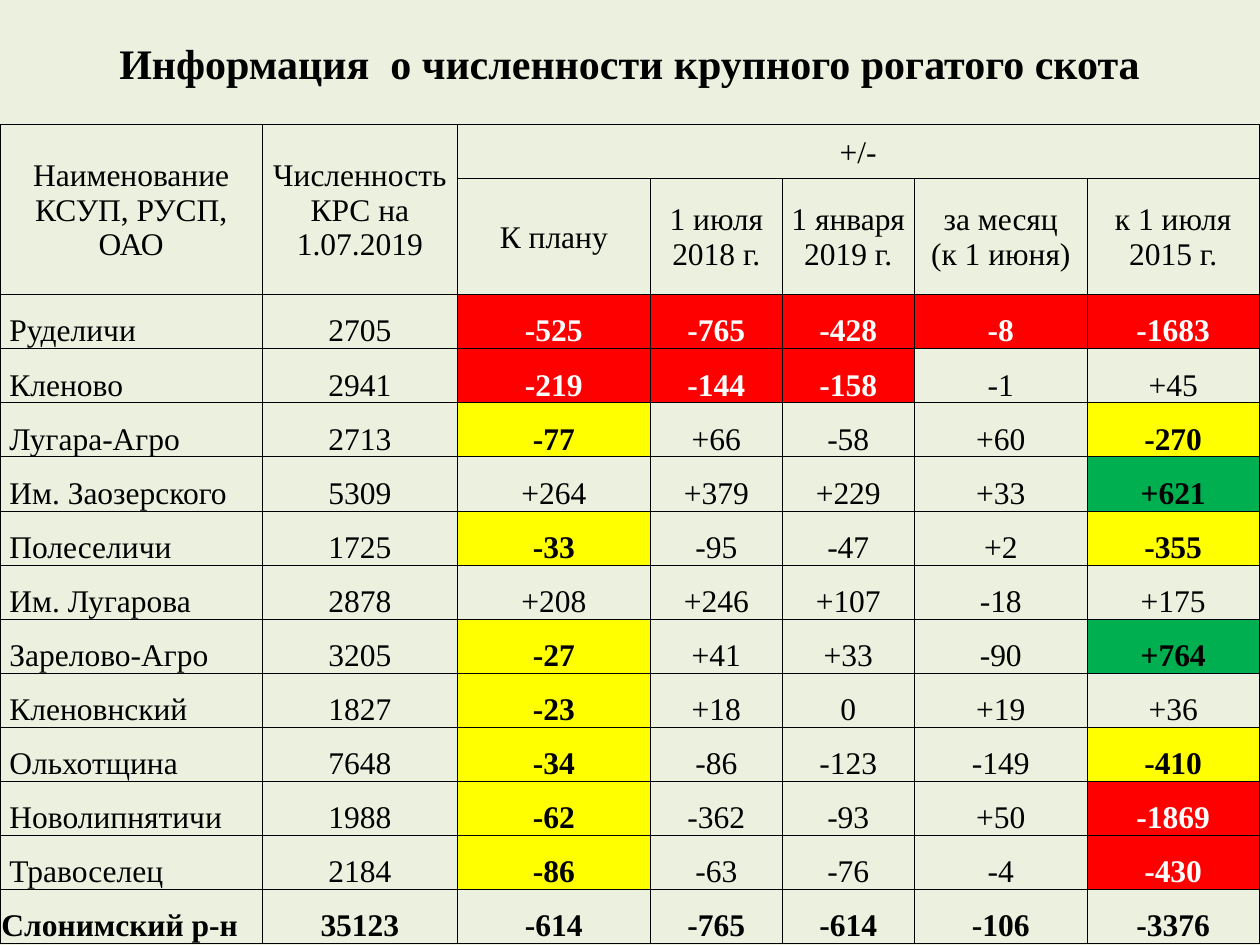
"""Build a slide with a table of cattle numbers by farm."""
import dataclasses

import pptx
import pptx.dml.color
import pptx.enum.text
import pptx.oxml
import pptx.oxml.ns
import pptx.util

Cm = pptx.util.Cm
Pt = pptx.util.Pt
ALIGN = pptx.enum.text.PP_ALIGN
ANCHOR = pptx.enum.text.MSO_ANCHOR


@dataclasses.dataclass(frozen=True)
class Theme:
    font: str = "Times New Roman"
    head: int = 24
    text: int = 18
    line: float = 0.5
    ink: str = "000000"
    light: str = "FFFFFF"
    base: str = "EBF1DE"
    red: str = "FF0000"
    yellow: str = "FFFF00"
    green: str = "00B050"


THEME = Theme()
MARKS = {"R": THEME.red, "Y": THEME.yellow, "G": THEME.green}
WIDTHS = [5.29, 3.93, 3.89, 2.66, 2.66, 3.49, 3.46]
STEP = 1.09
TITLE = "Информация  о численности крупного рогатого скота"
SIDES = ["Наименование КСУП, РУСП, ОАО", "Численность КРС на 1.07.2019"]
HEADS = ["К плану", "1 июля 2018 г.", "1 января 2019 г.",
         "за месяц\n(к 1 июня)", "к 1 июля 2015 г."]
FARMS = [
    ("Руделичи", "2705 -525 -765 -428 -8 -1683", "RRRRR"),
    ("Кленово", "2941 -219 -144 -158 -1 +45", "RRR--"),
    ("Лугара-Агро", "2713 -77 +66 -58 +60 -270", "Y---Y"),
    ("Им. Заозерского", "5309 +264 +379 +229 +33 +621", "----G"),
    ("Полеселичи", "1725 -33 -95 -47 +2 -355", "Y---Y"),
    ("Им. Лугарова", "2878 +208 +246 +107 -18 +175", "-----"),
    ("Зарелово-Агро", "3205 -27 +41 +33 -90 +764", "Y---G"),
    ("Кленовнский", "1827 -23 +18 0 +19 +36", "Y----"),
    ("Ольхотщина", "7648 -34 -86 -123 -149 -410", "Y---Y"),
    ("Новолипнятичи", "1988 -62 -362 -93 +50 -1869", "Y---R"),
    ("Травоселец", "2184 -86 -63 -76 -4 -430", "Y---R"),
]
TOTAL = ("Слонимский р-н", "35123 -614 -765 -614 -106 -3376")


def color(code):
    """Turn a hex code into a colour."""
    return pptx.dml.color.RGBColor.from_string(code)


def edge(cell, drawn):
    """Draw the named sides of a cell and hide the others."""
    props = cell._tc.get_or_add_tcPr()
    space = pptx.oxml.ns.nsdecls("a")
    for side in "LRTB":
        fill = (f'<a:solidFill><a:srgbClr val="{THEME.ink}"/></a:solidFill>'
                if side in drawn else "<a:noFill/>")
        props.append(pptx.oxml.parse_xml(
            f'<a:ln{side} {space} w="{Pt(THEME.line)}">{fill}</a:ln{side}>'))


def paint(cell, fill=THEME.base, drawn="LRTB"):
    """Give a cell its borders and fill."""
    edge(cell, drawn)
    cell.fill.solid()
    cell.fill.fore_color.rgb = color(fill)


def write(cell, text, size=THEME.text, bold=False, ink=THEME.ink,
          align=ALIGN.CENTER, anchor=ANCHOR.BOTTOM, left=0.03):
    """Set and format the text of a cell."""
    cell.margin_left, cell.margin_right = Cm(left), Cm(0.03)
    cell.margin_top, cell.margin_bottom = Cm(0.03), 0
    cell.vertical_anchor = anchor
    cell.text_frame.text = text
    for par in cell.text_frame.paragraphs:
        par.alignment = align
        for run in par.runs:
            run.font.name = THEME.font
            run.font.size = Pt(size)
            run.font.bold = bold
            run.font.color.rgb = color(ink)


def add_grid(slide):
    """Add the empty table with its column widths and row heights."""
    rows = [2.43, STEP, 2.34] + [STEP] * (len(FARMS) + 1)
    frame = slide.shapes.add_table(len(rows), len(WIDTHS), 0, Cm(0.08),
                                   Cm(sum(WIDTHS)), Cm(sum(rows)))
    grid = frame.table
    grid.first_row = grid.horz_banding = False
    for col, width in zip(grid.columns, WIDTHS):
        col.width = Cm(width)
    for row, height in zip(grid.rows, rows):
        row.height = Cm(height)
    return grid


def fill_head(grid):
    """Fill the title row and the two heading rows."""
    last = len(WIDTHS) - 1
    for col in range(last + 1):
        paint(grid.cell(0, col), drawn="B")
        for row in (1, 2):
            paint(grid.cell(row, col))
    grid.cell(0, 0).merge(grid.cell(0, last))
    write(grid.cell(0, 0), TITLE, THEME.head, True, anchor=ANCHOR.MIDDLE)
    for col, text in enumerate(SIDES):
        grid.cell(1, col).merge(grid.cell(2, col))
        write(grid.cell(1, col), text, anchor=ANCHOR.MIDDLE)
    grid.cell(1, 2).merge(grid.cell(1, last))
    write(grid.cell(1, 2), "+/-", anchor=ANCHOR.MIDDLE)
    for col, text in enumerate(HEADS, 2):
        write(grid.cell(2, col), text, anchor=ANCHOR.MIDDLE)


def fill_row(grid, row, name, nums, marks="-----", bold=False, left=0.19):
    """Fill one row with a name, its numbers and their marks."""
    first = grid.cell(row, 0)
    paint(first)
    write(first, name, bold=bold, align=ALIGN.LEFT, left=left)
    for col, (num, mark) in enumerate(zip(nums.split(), "-" + marks), 1):
        cell = grid.cell(row, col)
        paint(cell, MARKS.get(mark, THEME.base))
        write(cell, num, bold=bold or mark in MARKS,
              ink=THEME.light if mark == "R" else THEME.ink)


def main():
    """Build and save the slide."""
    deck = pptx.Presentation()
    deck.slide_width, deck.slide_height = Cm(25.4), Cm(19.05)
    slide = deck.slides.add_slide(deck.slide_layouts[6])
    slide.background.fill.solid()
    slide.background.fill.fore_color.rgb = color(THEME.base)
    grid = add_grid(slide)
    fill_head(grid)
    for row, farm in enumerate(FARMS, 3):
        fill_row(grid, row, *farm)
    fill_row(grid, len(FARMS) + 3, *TOTAL, bold=True, left=0.03)
    deck.save("out.pptx")


if __name__ == "__main__":
    main()
